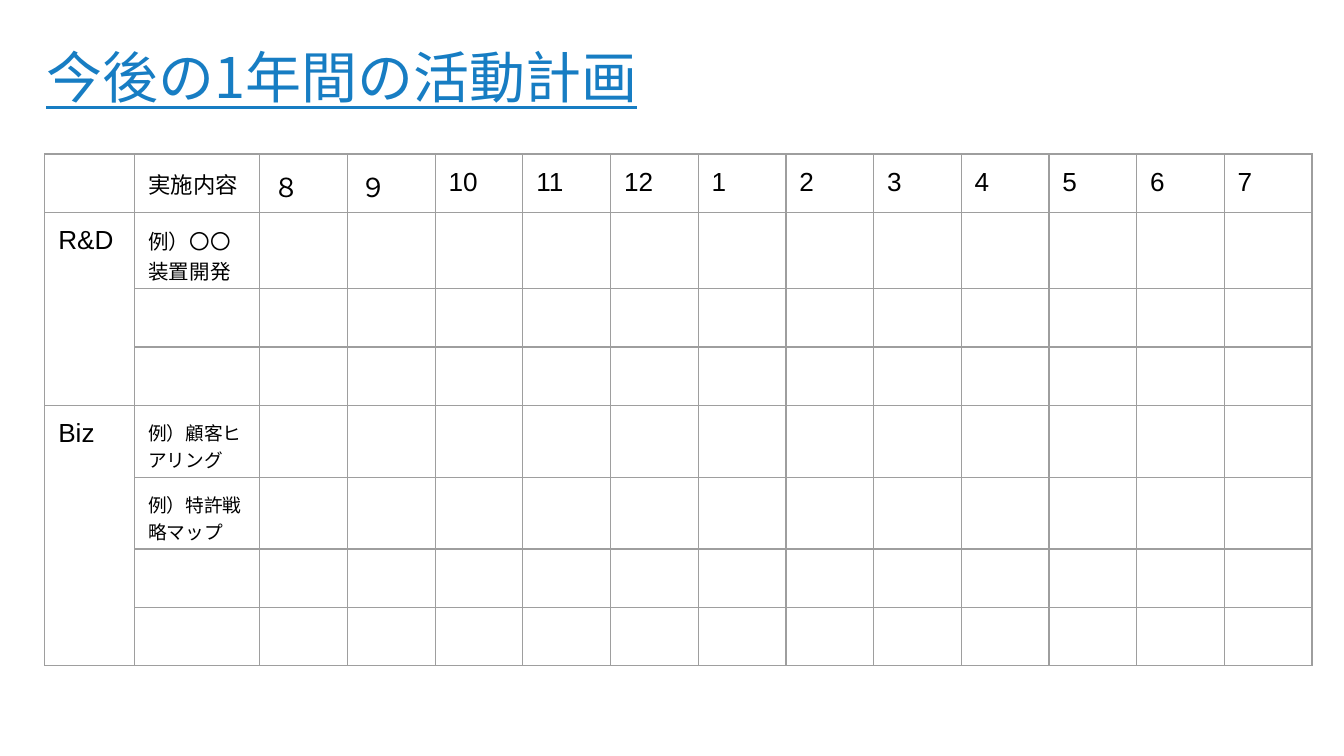
"""Build a one-slide yearly activity plan with a month grid."""
from dataclasses import dataclass

from lxml import etree
from pptx import Presentation, util as u
from pptx.dml.color import RGBColor
from pptx.enum import text
from pptx.oxml.ns import qn


@dataclass(frozen=True)
class Theme:
    title_font: str = "Noto Sans CJK JP"
    body_font: str = "Arial"
    accent: str = "177DC3"
    ink: str = "000000"
    rule: str = "9E9E9E"
    rule_width: float = 0.75
    title_size: int = 30
    body_size: int = 14
    heading_size: int = 12
    device_size: int = 11
    business_size: int = 10


class PlanSlide:
    """Hold the style and the slide, and draw the plan's elements."""

    def __init__(self, presentation, theme):
        self.theme = theme
        self.width = presentation.slide_width
        self.height = presentation.slide_height
        self.slide = presentation.slides.add_slide(presentation.slide_layouts[6])

    def box(self, left, top, width, height):
        across, down = self.width / 100, self.height / 100
        return (round(left * across), round(top * down),
                round(width * across), round(height * down))

    def run(self, paragraph, words, size, color, font):
        run = paragraph.add_run()
        run.text = words
        run.font.size = u.Pt(size)
        run.font.name = font
        run.font.color.rgb = RGBColor.from_string(color)
        return run

    def title(self, words, *percent):
        shape = self.slide.shapes.add_textbox(*self.box(*percent))
        frame = shape.text_frame
        frame.word_wrap = True
        frame.vertical_anchor = text.MSO_ANCHOR.TOP
        frame.margin_left = frame.margin_right = frame.margin_bottom = 0
        frame.margin_top = u.Inches(0.01)
        paragraph = frame.paragraphs[0]
        properties = paragraph._p.get_or_add_pPr()
        properties.set("marL", str(u.Inches(0.01)))
        properties.set("indent", "0")
        theme = self.theme
        run = self.run(paragraph, words, theme.title_size, theme.accent, theme.title_font)
        run.font.underline = True
        east_asian = etree.SubElement(run._r.get_or_add_rPr(), qn("a:ea"))
        east_asian.set("typeface", theme.title_font)

    def borders(self, cell):
        properties = cell._tc.get_or_add_tcPr()
        for position, side in enumerate(("lnL", "lnR", "lnT", "lnB")):
            line = etree.Element(qn(f"a:{side}"), w=str(u.Pt(self.theme.rule_width)))
            fill = etree.SubElement(line, qn("a:solidFill"))
            etree.SubElement(fill, qn("a:srgbClr"), val=self.theme.rule)
            properties.insert(position, line)

    def cell(self, cell, words, size):
        cell.fill.background()
        cell.margin_left = cell.margin_right = u.Inches(0.1)
        cell.margin_top = cell.margin_bottom = u.Inches(0.1)
        self.borders(cell)
        paragraph = cell.text_frame.paragraphs[0]
        if words:
            self.run(paragraph, words, size, self.theme.ink, self.theme.body_font)
        else:
            end = etree.SubElement(paragraph._p, qn("a:endParaRPr"), sz=str(size * 100))
            etree.SubElement(end, qn("a:latin"), typeface=self.theme.body_font)

    def table(self, columns, rows, entries, groups, *percent):
        frame = self.slide.shapes.add_table(len(rows), len(columns), *self.box(*percent))
        table = frame.table
        table.first_row = table.horz_banding = False
        for column, width in zip(table.columns, columns):
            column.width = u.Inches(width)
        for row, height in zip(table.rows, rows):
            row.height = u.Inches(height)
        for row in range(len(rows)):
            for column in range(len(columns)):
                words, size = entries.get((row, column), ("", self.theme.body_size))
                self.cell(table.cell(row, column), words, size)
        for first, last in groups:
            table.cell(first, 0).merge(table.cell(last, 0))


def main():
    presentation = Presentation()
    presentation.slide_width = u.Inches(10)
    presentation.slide_height = presentation.slide_width * 9 // 16
    theme = Theme()
    plan = PlanSlide(presentation, theme)
    plan.title("今後の1年間の活動計画", 3.34, 5.5, 73.1, 9.25)

    months = ["８", "９", "10", "11", "12", *map(str, range(1, 8))]
    entries = {(0, column): (month, theme.body_size)
               for column, month in enumerate(months, start=2)}
    entries.update({
        (0, 1): ("実施内容", theme.heading_size),
        (1, 0): ("R&D", theme.body_size),
        (1, 1): ("例）〇〇装置開発", theme.device_size),
        (4, 0): ("Biz", theme.body_size),
        (4, 1): ("例）顧客ヒアリング", theme.business_size),
        (5, 1): ("例）特許戦略マップ", theme.business_size),
    })
    labels = [0.67, 0.93]
    month_width = (9.43 - sum(labels)) / len(months)
    columns = labels + [month_width] * len(months)
    tall_rows = {1: 0.57, 4: 0.53, 5: 0.53}
    rows = [tall_rows.get(row, 0.43) for row in range(8)]
    plan.table(columns, rows, entries, [(1, 3), (4, 7)], 3.34, 20.36, 94.3, 67.56)
    presentation.save("out.pptx")


if __name__ == "__main__":
    main()
